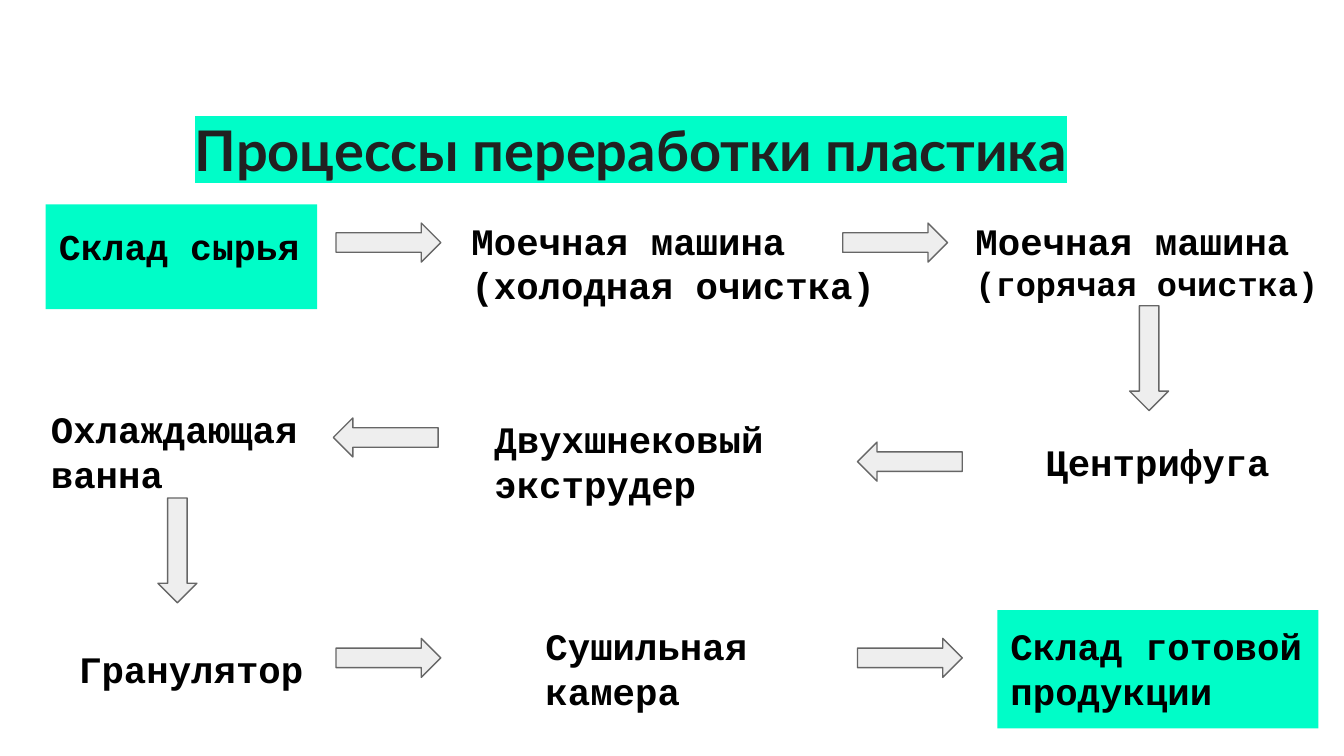
from dataclasses import dataclass

from lxml.etree import Element, SubElement
from pptx import Presentation
from pptx.dml.color import RGBColor
from pptx.enum.shapes import MSO_SHAPE as Preset
from pptx.enum.text import MSO_ANCHOR as Anchor, MSO_AUTO_SIZE as AutoSize, PP_ALIGN as Align
from pptx.oxml.ns import qn
from pptx.slide import Slide
from pptx.text.text import TextFrame
from pptx.util import Inches, Length, Pt


@dataclass(frozen=True)
class Theme:
    accent: str = "00FDC8"
    title_ink: str = "212121"
    step_ink: str = "000000"
    arrow_fill: str = "EEEEEE"
    arrow_edge: str = "666666"
    title_font: str = "Lato"
    step_font: str = "Courier New"
    title_size: float = 30
    step_size: float = 20
    start_size: float = 19.5
    detail_size: float = 18
    edge_width: float = 0.75


@dataclass(frozen=True)
class Area:
    column: float
    row: float
    columns: float
    rows: float

    def box(self) -> tuple[Length, ...]:
        return tuple(
            Inches(cells * CELL)
            for cells in (self.column, self.row, self.columns, self.rows)
        )


@dataclass(frozen=True)
class Step:
    lines: tuple[str, ...]
    area: Area
    sizes: tuple[float, ...] = (Theme.step_size,)
    highlighted: bool = False
    line_spacing: float = 1.0


@dataclass(frozen=True)
class Arrow:
    column: float
    row: float
    rotation: int = 0


THEME = Theme()
CELL = 0.1
GRID_COLUMNS, GRID_ROWS = 100, 56.25
TITLE_AREA = Area(3.4, 6.1, 87.1, 8.5)
ARROW_COLUMNS, ARROW_ROWS = 7.8, 2.9
ONE_LINE, TWO_LINES = 5.4, 8.8
TOP_ROW, BOTTOM_ROW = 15.2, 45.4
TOP_ARROWS, BOTTOM_ARROWS = 16.6, 47.5
LEFT_GAP, RIGHT_GAP = 25, 63.8
DOWN, BACK = 90, 180

STEPS = (
    Step(("Склад сырья",), Area(3.4, TOP_ROW, 20.2, 7.8),
         (THEME.start_size,), True, 1.15),
    Step(("Моечная машина", "(холодная очистка)"),
         Area(34.1, TOP_ROW, 34.4, TWO_LINES)),
    Step(("Моечная машина", "(горячая очистка)"),
         Area(71.6, TOP_ROW, 27.7, 8.4),
         (THEME.step_size, THEME.detail_size)),
    Step(("Центрифуга",), Area(76.8, 31.7, 19.2, ONE_LINE)),
    Step(("Двухшнековый экструдер",), Area(35.8, 30, 24.8, TWO_LINES)),
    Step(("Охлаждающая ванна",), Area(2.8, 29.2, 20.8, TWO_LINES)),
    Step(("Гранулятор",), Area(4.9, 47.1, 20.2, ONE_LINE)),
    Step(("Сушильная камера",), Area(39.6, BOTTOM_ROW, 20.8, TWO_LINES)),
    Step(("Склад готовой продукции",),
         Area(74.2, BOTTOM_ROW, 23.9, TWO_LINES), highlighted=True),
)

ARROWS = (
    Arrow(LEFT_GAP, TOP_ARROWS),
    Arrow(62.7, TOP_ARROWS),
    Arrow(81.6, 25.2, DOWN),
    Arrow(RIGHT_GAP, 32.9, BACK),
    Arrow(24.8, 31.1, BACK),
    Arrow(9.3, 39.5, DOWN),
    Arrow(LEFT_GAP, BOTTOM_ARROWS),
    Arrow(RIGHT_GAP, BOTTOM_ARROWS),
)


def color(code: str) -> RGBColor:
    return RGBColor.from_string(code)


def prepare_frame(frame: TextFrame, anchor: Anchor) -> None:
    frame.word_wrap = True
    frame.auto_size = AutoSize.NONE
    frame.vertical_anchor = anchor
    frame.margin_left = frame.margin_right = Inches(CELL)
    frame.margin_top = frame.margin_bottom = Inches(CELL)


def format_run(run, font: str, size: float, ink: str) -> None:
    run.font.name = font
    run.font.size = Pt(size)
    run.font.bold = True
    run.font.color.rgb = color(ink)


def draw_title(slide: Slide, wording: str) -> None:
    heading = slide.shapes.title
    heading.left, heading.top, heading.width, heading.height = TITLE_AREA.box()
    prepare_frame(heading.text_frame, Anchor.BOTTOM)
    heading.text_frame.text = wording
    paragraph = heading.text_frame.paragraphs[0]
    paragraph.alignment = Align.CENTER
    run = paragraph.runs[0]
    format_run(run, THEME.title_font, THEME.title_size, THEME.title_ink)
    marker = Element(qn("a:highlight"))
    SubElement(marker, qn("a:srgbClr"), val=THEME.accent)
    run.font._element.find(qn("a:solidFill")).addnext(marker)


def draw_step(slide: Slide, step: Step) -> None:
    if step.highlighted:
        holder = slide.shapes.add_shape(Preset.RECTANGLE, *step.area.box())
        holder.shadow.inherit = False
        holder.fill.solid()
        holder.fill.fore_color.rgb = color(THEME.accent)
        holder.line.fill.background()
    else:
        holder = slide.shapes.add_textbox(*step.area.box())
    frame = holder.text_frame
    prepare_frame(frame, Anchor.TOP)
    frame.text = "\n".join(step.lines)
    for index, paragraph in enumerate(frame.paragraphs):
        paragraph.alignment = Align.LEFT
        paragraph.line_spacing = step.line_spacing
        size = step.sizes[index % len(step.sizes)]
        format_run(paragraph.runs[0], THEME.step_font, size, THEME.step_ink)


def draw_arrow(slide: Slide, arrow: Arrow) -> None:
    area = Area(arrow.column, arrow.row, ARROW_COLUMNS, ARROW_ROWS)
    pointer = slide.shapes.add_shape(Preset.RIGHT_ARROW, *area.box())
    pointer.rotation = arrow.rotation
    pointer.shadow.inherit = False
    pointer.fill.solid()
    pointer.fill.fore_color.rgb = color(THEME.arrow_fill)
    pointer.line.color.rgb = color(THEME.arrow_edge)
    pointer.line.width = Pt(THEME.edge_width)


def main() -> None:
    deck = Presentation()
    deck.slide_width = Inches(GRID_COLUMNS * CELL)
    deck.slide_height = Inches(GRID_ROWS * CELL)
    slide = deck.slides.add_slide(deck.slide_layouts.get_by_name("Title Only"))
    draw_title(slide, "Процессы переработки пластика")
    for step in STEPS:
        draw_step(slide, step)
    for arrow in ARROWS:
        draw_arrow(slide, arrow)
    deck.save("out.pptx")


if __name__ == "__main__":
    main()
